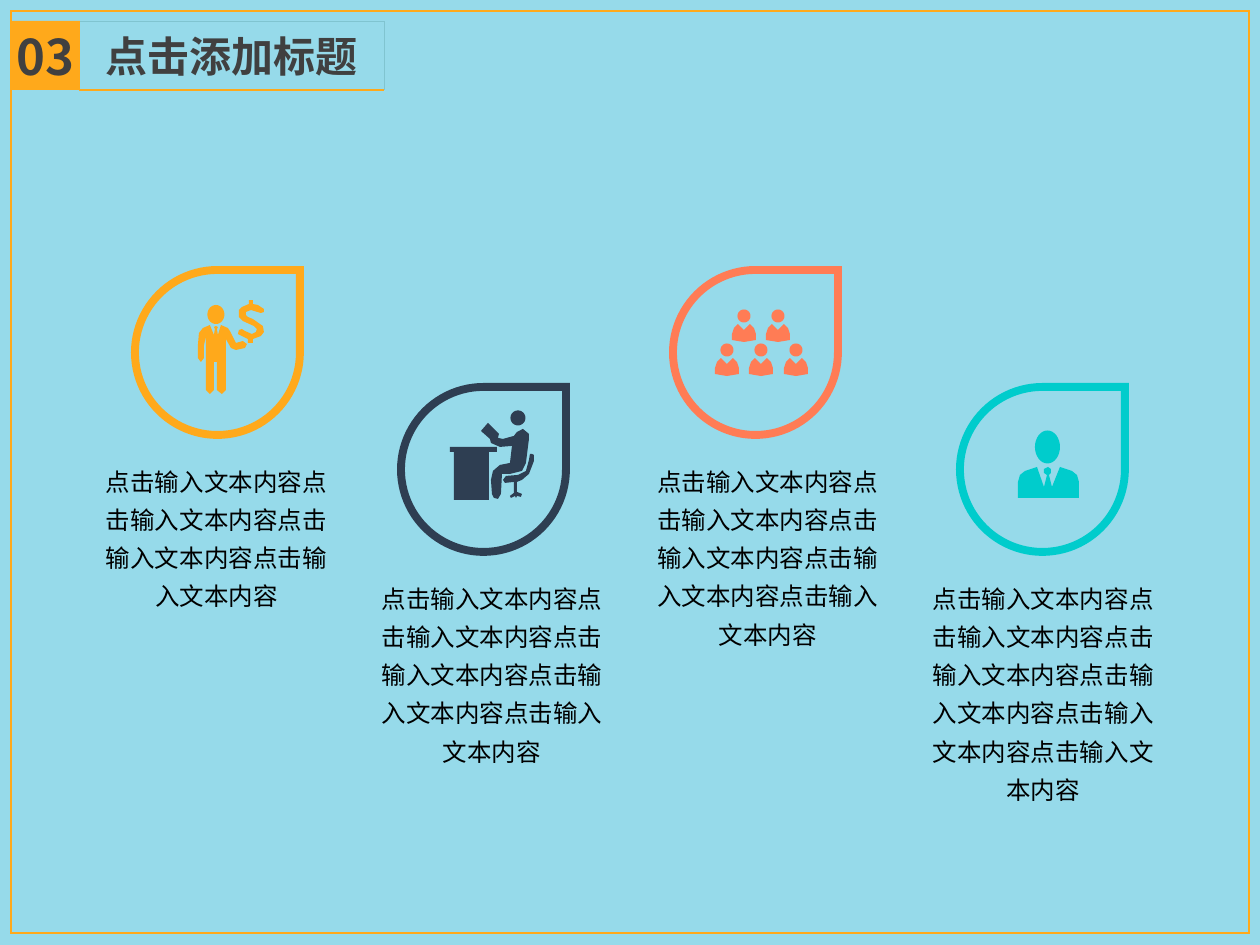
import math

from lxml import etree
from pptx import Presentation
from pptx.dml.color import RGBColor
from pptx.enum.shapes import MSO_CONNECTOR, MSO_SHAPE
from pptx.enum.text import MSO_ANCHOR, PP_ALIGN
from pptx.oxml.ns import qn
from pptx.util import Pt

EMU_PER_PX = 914400 / 126
RECT, TEARDROP = MSO_SHAPE.RECTANGLE, MSO_SHAPE.TEAR
STRAIGHT = MSO_CONNECTOR.STRAIGHT
CENTER, MIDDLE = PP_ALIGN.CENTER, MSO_ANCHOR.MIDDLE

FONT = "Noto Sans CJK SC"
SKY, ORANGE, NAVY, CORAL, TEAL = "96DAEA", "FFA91B", "2E3E52", "FF7C55", "00CCCC"
HAIRLINE, GREY, BLACK = "80C4D0", "404040", "000000"

NUMBER, TITLE = "03", "点击添加标题"
PHRASE = "点击输入文本内容"


def ellipse(cx, cy, rx, ry, steps=32):
    angles = [2 * math.pi * i / steps for i in range(steps)]
    return [(cx + rx * math.cos(a), cy + ry * math.sin(a)) for a in angles]


def team_member(cx, cy):
    """Head and shoulders, placed by the centre of the head."""
    half = [(6, 8), (10, 12), (12, 18), (12, 24)]
    shoulders = [(0, 14)] + half + [(0, 26)] + [(-x, y) for x, y in reversed(half)]
    return [ellipse(cx, cy, 6.5, 6.5), [(cx + x, cy + y) for x, y in shoulders]]


EARNER = [
    ellipse(216, 314.5, 8.5, 9.5),
    [(210, 325), (214, 335), (215, 329), (214, 327), (216, 326), (218, 327), (217, 329),
     (218, 335), (221, 325), (228, 328), (230, 331), (236, 343), (243, 341), (247, 344),
     (245, 348), (236, 350), (231, 348), (226, 339), (226, 390), (222, 394), (217, 390),
     (217, 362), (214, 362), (214, 390), (210, 394), (206, 390), (206, 336), (204, 346),
     (204, 358), (201, 362), (198, 358), (198, 345), (199, 333), (203, 328)],
    [(249, 300), (253, 300), (253, 304), (258, 305), (264, 309), (264, 312), (261, 313),
     (251, 310), (246, 312), (246, 315), (248, 317), (253, 319), (263, 326), (264, 332),
     (261, 336), (253, 339), (253, 343), (248, 343), (248, 339), (238, 334), (239, 330),
     (242, 329), (245, 331), (252, 334), (256, 332), (257, 329), (254, 326), (243, 321),
     (239, 317), (239, 310), (242, 307), (249, 304)],
]
DESK_WORKER = [
    ellipse(518, 418, 7.5, 7.5),
    [(450, 447), (497, 447), (497, 452), (489, 452), (489, 500), (454, 500), (454, 452),
     (450, 452)],
    [(532, 454), (534, 455), (534, 461), (529, 474), (522, 480), (517, 482), (517, 492),
     (522, 494), (521, 497), (517, 496), (516, 498), (515, 496), (511, 498), (510, 496),
     (514, 493), (514, 482), (505, 483), (503, 480), (506, 476), (518, 475), (526, 471),
     (529, 460), (530, 454)],
    [(488, 423), (499, 434), (498, 438), (503, 439), (514, 436), (517, 432), (523, 429),
     (529, 434), (529, 439), (526, 463), (522, 471), (510, 474), (502, 474), (501, 494),
     (498, 499), (494, 498), (492, 494), (491, 480), (493, 471), (500, 465), (510, 463),
     (512, 446), (500, 447), (491, 443), (490, 439), (481, 431)],
]
TEAM_SEATS = [(744, 316), (778, 316), (727, 350), (761, 350), (796, 350)]
TEAM = [outline for seat in TEAM_SEATS for outline in team_member(*seat)]
MANAGER = [
    ellipse(1047.5, 447, 12.5, 16.5),
    [(1037, 467), (1044, 487), (1047, 475), (1044, 473), (1044, 469), (1048, 467),
     (1051, 469), (1051, 473), (1049, 475), (1052, 487), (1060, 467), (1072, 471),
     (1077, 475), (1079, 482), (1079, 498), (1018, 498), (1018, 482), (1020, 475),
     (1025, 471)],
]

# colour, left and top of the drop, repeats of the phrase, icon outlines
COLUMNS = [
    (ORANGE, 135, 270, 4, EARNER),
    (NAVY, 401, 387, 5, DESK_WORKER),
    (CORAL, 673, 270, 5, TEAM),
    (TEAL, 960, 387, 6, MANAGER),
]
DROP_SIZE = 165
CAPTION_LEFT, CAPTION_STEP, CAPTION_DROP = 102, 275.6, 188
CAPTION_WIDTH, CAPTION_HEIGHT = 229, 131


def px(*lengths):
    return [round(length * EMU_PER_PX) for length in lengths]


def rgb(color):
    return RGBColor.from_string(color)


def paint(shape, fill=None, line=None, width=1):
    if fill:
        shape.fill.solid()
        shape.fill.fore_color.rgb = rgb(fill)
    else:
        shape.fill.background()
    if line:
        shape.line.color.rgb = rgb(line)
        shape.line.width = Pt(width)
        etree.SubElement(shape.line._get_or_add_ln(), qn("a:miter"), lim="800000")
    else:
        shape.line.fill.background()


def add_shape(slide, kind, box, **look):
    shape = slide.shapes.add_shape(kind, *px(*box))
    shape.shadow.inherit = False
    paint(shape, **look)
    return shape


def write(shape, text, size, color, bold=False, spacing=None, anchor=None):
    frame = shape.text_frame
    frame.text = text
    frame.word_wrap = True
    frame.vertical_anchor = anchor
    frame.margin_left = frame.margin_right = frame.margin_top = frame.margin_bottom = 0
    paragraph = frame.paragraphs[0]
    paragraph.alignment = CENTER
    paragraph.line_spacing = spacing
    font = paragraph.runs[0].font
    font.size, font.bold, font.name = Pt(size), bold, FONT
    font.color.rgb = rgb(color)
    etree.SubElement(font._element, qn("a:ea"), typeface=FONT)


def add_icon(slide, outlines, color):
    builder = None
    for outline in outlines:
        start, *rest = [px(*point) for point in outline]
        if builder is None:
            builder = slide.shapes.build_freeform(*start, scale=1.0)
        else:
            builder.move_to(*start)
        builder.add_line_segments(rest, close=True)
    icon = builder.convert_to_shape()
    icon.shadow.inherit = False
    paint(icon, fill=color)


def add_header(slide):
    add_shape(slide, RECT, (11, 11, 1238, 922), line=ORANGE)
    badge = add_shape(slide, RECT, (11, 21, 69, 69), fill=ORANGE)
    write(badge, NUMBER, 28, GREY, bold=True, anchor=MIDDLE)
    title = slide.shapes.title
    title.left, title.top, title.width, title.height = px(79, 21, 305, 69)
    paint(title, line=HAIRLINE, width=0.5)
    write(title, TITLE, 24, GREY, bold=True, anchor=MIDDLE)
    underline = slide.shapes.add_connector(STRAIGHT, *px(79, 90, 384, 90))
    underline.line.color.rgb = rgb(ORANGE)
    underline.line.width = Pt(1)
    etree.SubElement(underline._element.spPr, qn("a:effectLst"))


def main():
    deck = Presentation()
    deck.slide_width, deck.slide_height = px(1260, 945)
    slide = deck.slides.add_slide(deck.slide_layouts[5])
    slide.background.fill.solid()
    slide.background.fill.fore_color.rgb = rgb(SKY)
    add_header(slide)
    for i, (color, left, top, repeats, outlines) in enumerate(COLUMNS):
        caption = slide.shapes.add_textbox(*px(
            CAPTION_LEFT + i * CAPTION_STEP, top + CAPTION_DROP,
            CAPTION_WIDTH, CAPTION_HEIGHT))
        write(caption, PHRASE * repeats, 14, BLACK, spacing=1.3)
        add_shape(slide, TEARDROP, (left, top, DROP_SIZE, DROP_SIZE), line=color, width=4.5)
        add_icon(slide, outlines, color)
    deck.save("out.pptx")


if __name__ == "__main__":
    main()
